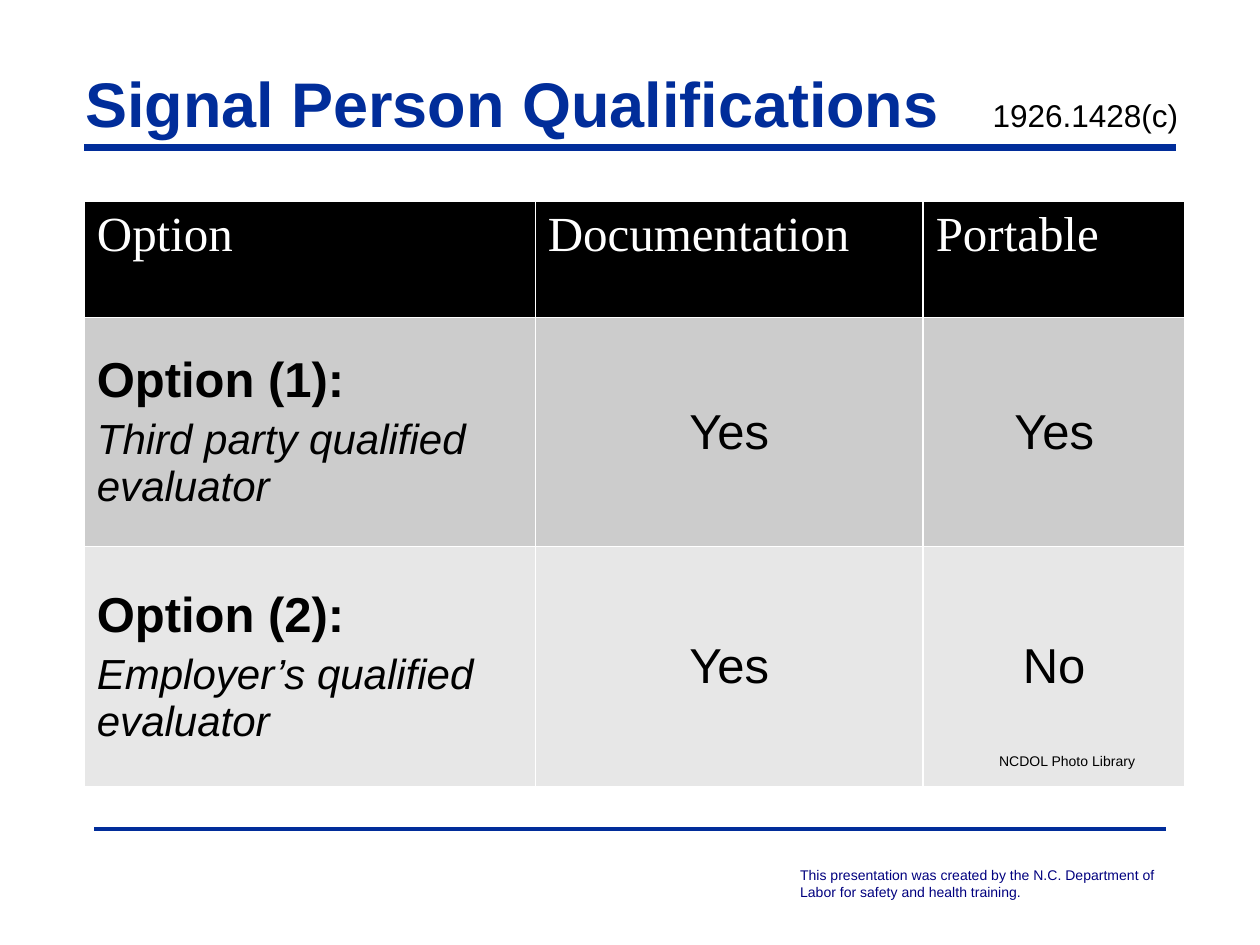
import pptx
import pptx.dml.color
import pptx.enum.shapes
import pptx.enum.text
import pptx.oxml
import pptx.oxml.ns
import pptx.util
import lxml.etree

Cm = pptx.util.Cm
NAVY = "012D9A"
BLACK = "000000"
WHITE = "FFFFFF"
COLUMN_WIDTHS = (9.09, 7.82, 5.28)
ROW_HEIGHTS = (2.34, 4.62, 4.85)
HEADINGS = ("Option", "Documentation", "Portable")
OPTIONS = (
    ("Option (1):", "Third party qualified evaluator", "Yes", "Yes", "CCCCCC"),
    ("Option (2):", "Employer’s qualified evaluator", "Yes", "No", "E7E7E7"),
)


def color(value):
    """Return the colour for a hex string."""
    return pptx.dml.color.RGBColor.from_string(value)


def add_run(paragraph, text, size=28, font="Arial", fill=BLACK, bold=False, italic=False):
    """Add formatted text to a paragraph."""
    run = paragraph.add_run()
    run.text = text
    run.font.size = pptx.util.Pt(size)
    run.font.name = font
    run.font.bold = bold
    run.font.italic = italic
    run.font.color.rgb = color(fill)


def add_text_box(slide, left, top, width, height):
    """Add a wrapping text box and return its first paragraph."""
    shape = slide.shapes.add_textbox(Cm(left), Cm(top), Cm(width), Cm(height))
    shape.text_frame.word_wrap = True
    return shape.text_frame.paragraphs[0]


def add_tab_stop(paragraph, position):
    """Add a left tab stop to a paragraph."""
    properties = paragraph._p.get_or_add_pPr()
    tabs = lxml.etree.SubElement(properties, pptx.oxml.ns.qn("a:tabLst"))
    lxml.etree.SubElement(tabs, pptx.oxml.ns.qn("a:tab"), pos=str(Cm(position)), algn="l")


def add_rule(slide, left, right, top, weight):
    """Add a horizontal navy line without shadow."""
    rule = slide.shapes.add_connector(
        pptx.enum.shapes.MSO_CONNECTOR.STRAIGHT, Cm(left), Cm(top), Cm(right), Cm(top))
    rule.line.color.rgb = color(NAVY)
    rule.line.width = pptx.util.Pt(weight)
    lxml.etree.SubElement(rule._element.spPr, pptx.oxml.ns.qn("a:effectLst"))


def style_cell(cell, fill):
    """Give a cell white borders and a solid fill."""
    properties = cell._tc.get_or_add_tcPr()
    for side in "LRTB":
        properties.append(pptx.oxml.parse_xml(
            f'<a:ln{side} {pptx.oxml.ns.nsdecls("a")} w="{pptx.util.Pt(1)}"><a:solidFill>'
            f'<a:srgbClr val="{WHITE}"/></a:solidFill></a:ln{side}>'))
    cell.fill.solid()
    cell.fill.fore_color.rgb = color(fill)


def add_options_table(slide):
    """Add the table that compares the qualification options."""
    table = slide.shapes.add_table(
        len(ROW_HEIGHTS), len(COLUMN_WIDTHS), Cm(1.7), Cm(4.06),
        Cm(sum(COLUMN_WIDTHS)), Cm(sum(ROW_HEIGHTS))).table
    table.first_row = False
    table.horz_banding = False
    for column, width in zip(table.columns, COLUMN_WIDTHS):
        column.width = Cm(width)
    for row, height in zip(table.rows, ROW_HEIGHTS):
        row.height = Cm(height)
    for cell, heading in zip(table.rows[0].cells, HEADINGS):
        style_cell(cell, BLACK)
        add_run(cell.text_frame.paragraphs[0], heading, font="Times New Roman", fill=WHITE)
    for row_index, (name, evaluator, *answers, fill) in enumerate(OPTIONS, start=1):
        cells = list(table.rows[row_index].cells)
        for cell in cells:
            style_cell(cell, fill)
            cell.vertical_anchor = pptx.enum.text.MSO_ANCHOR.MIDDLE
        add_run(cells[0].text_frame.paragraphs[0], name, bold=True)
        description = cells[0].text_frame.add_paragraph()
        description.space_before = pptx.util.Pt(5)
        add_run(description, evaluator, size=24, italic=True)
        for cell, answer in zip(cells[1:], answers):
            paragraph = cell.text_frame.paragraphs[0]
            paragraph.alignment = pptx.enum.text.PP_ALIGN.CENTER
            add_run(paragraph, answer)


def main():
    """Build the slide and save it."""
    presentation = pptx.Presentation()
    presentation.slide_width = Cm(25.4)
    presentation.slide_height = Cm(19.05)
    slide = presentation.slides.add_slide(presentation.slide_layouts[6])
    add_rule(slide, 1.7, 23.7, 2.97, 4)
    add_rule(slide, 1.9, 23.5, 16.71, 2)
    footer = add_text_box(slide, 15.88, 17.35, 8.26, 0.94)
    add_run(footer, "This presentation was created by the N.C. Department of "
            "Labor for safety and health training.", size=8, fill="00007F")
    add_options_table(slide)
    title = add_text_box(slide, 1.47, 1.17, 22.66, 1.8)
    add_tab_stop(title, 18.29)
    add_run(title, "Signal Person Qualifications\t", size=36, fill=NAVY, bold=True)
    add_run(title, "1926.1428(c)", size=18)
    credit = add_text_box(slide, 19.89, 15.04, 5.5, 0.61)
    add_run(credit, "NCDOL Photo Library", size=8)
    presentation.save("out.pptx")


if __name__ == "__main__":
    main()
